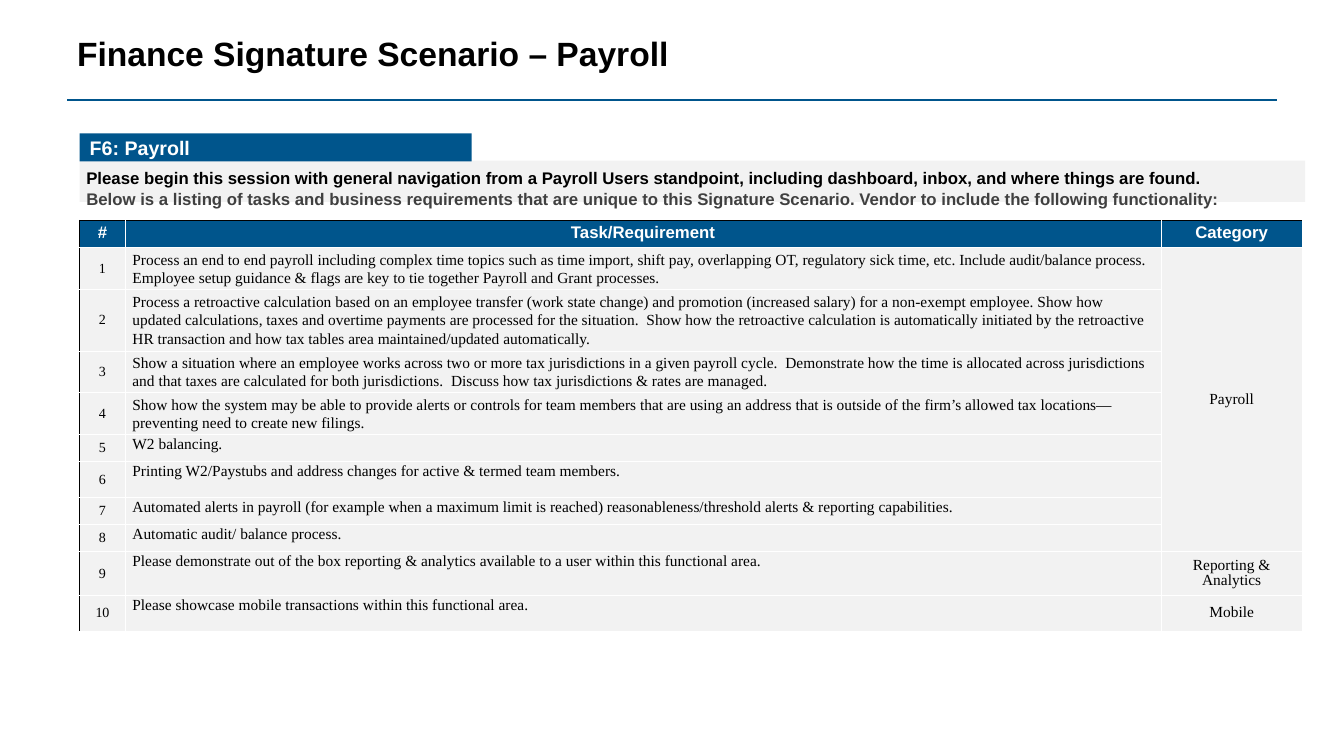
import dataclasses

import pptx
import pptx.dml.color
import pptx.enum.shapes
import pptx.enum.text
import pptx.oxml
import pptx.oxml.ns
import pptx.util
from lxml import etree

Pt = pptx.util.Pt
ALIGN = pptx.enum.text.PP_ALIGN
ANCHOR = pptx.enum.text.MSO_ANCHOR


@dataclasses.dataclass(frozen=True)
class Theme:
    blue: str = "00558C"
    pale: str = "F2F2F2"
    white: str = "FFFFFF"
    black: str = "000000"
    gray: str = "404040"
    sans: str = "Arial"
    serif: str = "Times New Roman"
    title: int = 24
    label: int = 14
    head: int = 12
    body: int = 11
    small: int = 10


THEME = Theme()

COLS = (32.4, 740.2, 100.8)
HEAD = ("#", "Task/Requirement", "Category")
HEAD_HIGH = 19.4

# Each task: row height, anchor, wording
TASKS = (
    (29.7, ANCHOR.MIDDLE, "Process an end to end payroll including complex time topics such as time import, shift pay, overlapping OT, regulatory sick time, etc. Include audit/balance process. Employee setup guidance & flags are key to tie together Payroll and Grant processes."),
    (44.3, ANCHOR.MIDDLE, "Process a retroactive calculation based on an employee transfer (work state change) and promotion (increased salary) for a non-exempt employee. Show how updated calculations, taxes and overtime payments are processed for the situation.  Show how the retroactive calculation is automatically initiated by the retroactive HR transaction and how tax tables area maintained/updated automatically."),
    (29.7, ANCHOR.MIDDLE, "Show a situation where an employee works across two or more tax jurisdictions in a given payroll cycle.  Demonstrate how the time is allocated across jurisdictions and that taxes are calculated for both jurisdictions.  Discuss how tax jurisdictions & rates are managed."),
    (29.7, ANCHOR.MIDDLE, "Show how the system may be able to provide alerts or controls for team members that are using an address that is outside of the firm’s allowed tax locations—preventing need to create new filings."),
    (19.4, ANCHOR.TOP, "W2 balancing."),
    (25.8, ANCHOR.TOP, "Printing W2/Paystubs and address changes for active & termed team members."),
    (19.4, ANCHOR.TOP, "Automated alerts in payroll (for example when a maximum limit is reached) reasonableness/threshold alerts & reporting capabilities."),
    (19.4, ANCHOR.TOP, "Automatic audit/ balance process."),
    (31, ANCHOR.TOP, "Please demonstrate out of the box reporting & analytics available to a user within this functional area."),
    (25.8, ANCHOR.TOP, "Please showcase mobile transactions within this functional area."),
)

# Each group: first row, last row, name
GROUPS = ((1, 8, "Payroll"), (9, 9, "Reporting & Analytics"), (10, 10, "Mobile"))


def tint(code):
    return pptx.dml.color.RGBColor.from_string(code)


def write(para, words, *, size, ink=THEME.black, font=THEME.sans,
          bold=False, align=ALIGN.LEFT, gap=None):
    para.alignment = align
    para.line_spacing = gap
    run = para.add_run()
    run.text = words
    run.font.size = Pt(size)
    run.font.name = font
    run.font.bold = bold
    run.font.color.rgb = tint(ink)


def add_text(slide, left, top, width, height):
    frame = slide.shapes.add_textbox(Pt(left), Pt(top), Pt(width), Pt(height)).text_frame
    frame.word_wrap = True
    return frame


def add_bar(slide, left, top, width, height, fill):
    kind = pptx.enum.shapes.MSO_SHAPE.RECTANGLE
    bar = slide.shapes.add_shape(kind, Pt(left), Pt(top), Pt(width), Pt(height))
    bar.shadow.inherit = False
    bar.fill.solid()
    bar.fill.fore_color.rgb = tint(fill)
    bar.line.fill.background()
    bar.text_frame.vertical_anchor = ANCHOR.MIDDLE
    return bar.text_frame


def add_rule(slide, left, right, top):
    kind = pptx.enum.shapes.MSO_CONNECTOR.STRAIGHT
    rule = slide.shapes.add_connector(kind, Pt(left), Pt(top), Pt(right), Pt(top))
    rule.line.color.rgb = tint(THEME.blue)
    rule.line.width = Pt(1.5)
    etree.SubElement(rule.element.spPr, pptx.oxml.ns.qn("a:effectLst"))


def style_cell(cell, row, col):
    # Borders come before the fill in the cell's XML
    props = cell._tc.get_or_add_tcPr()
    dark = {"L": col == 0, "R": False, "T": row == 0, "B": False}
    for side, is_dark in dark.items():
        ink = THEME.black if is_dark else THEME.white
        props.append(pptx.oxml.parse_xml(
            f'<a:ln{side} {pptx.oxml.ns.nsdecls("a")} w="12700"><a:solidFill>'
            f'<a:srgbClr val="{ink}"/></a:solidFill></a:ln{side}>'))
    cell.fill.solid()
    cell.fill.fore_color.rgb = tint(THEME.pale if row else THEME.blue)


def fill_cell(cell, words, *, side=3.6, edge=3.6, anchor=ANCHOR.MIDDLE, **form):
    cell.margin_left = cell.margin_right = Pt(side)
    cell.margin_top = cell.margin_bottom = Pt(edge)
    cell.vertical_anchor = anchor
    write(cell.text_frame.paragraphs[0], words, **form)


def add_grid(slide, left, top):
    highs = [HEAD_HIGH] + [task[0] for task in TASKS]
    grid = slide.shapes.add_table(len(highs), len(COLS), Pt(left), Pt(top),
                                  Pt(sum(COLS)), Pt(sum(highs))).table
    for col, width in zip(grid.columns, COLS):
        col.width = Pt(width)
    for row, high in enumerate(highs):
        grid.rows[row].height = Pt(high)
        for col in range(len(COLS)):
            style_cell(grid.cell(row, col), row, col)

    mid = {"align": ALIGN.CENTER, "gap": Pt(11)}
    for col, words in enumerate(HEAD):
        fill_cell(grid.cell(0, col), words, size=THEME.head,
                  ink=THEME.white, bold=True, **mid)
    for row, (_, anchor, words) in enumerate(TASKS, 1):
        fill_cell(grid.cell(row, 0), str(row), size=THEME.small, font=THEME.serif, **mid)
        fill_cell(grid.cell(row, 1), words, side=5.2, edge=0, anchor=anchor,
                  size=THEME.body, font=THEME.serif, gap=1.07)
    for first, last, words in GROUPS:
        cell = grid.cell(first, 2)
        if last > first:
            cell.merge(grid.cell(last, 2))
        fill_cell(cell, words, size=THEME.body, font=THEME.serif, **mid)


def main():
    deck = pptx.Presentation()
    deck.slide_width, deck.slide_height = Pt(960.2), Pt(540)
    slide = deck.slides.add_slide(deck.slide_layouts[6])

    # Title and rule
    add_rule(slide, 48, 912, 71.5)
    title = add_text(slide, 48, 23, 864.5, 47)
    write(title.paragraphs[0], "Finance Signature Scenario – Payroll",
          size=THEME.title, bold=True, gap=0.9)

    # Section label and intro
    add_bar(slide, 57, 114.8, 875.5, 29.5, THEME.pale)
    label = add_bar(slide, 57, 95.3, 280, 20, THEME.blue)
    write(label.paragraphs[0], "F6: Payroll", size=THEME.label,
          ink=THEME.white, bold=True)
    intro = add_text(slide, 54.6, 116.6, 875.5, 36)
    write(intro.paragraphs[0], "Please begin this session with general navigation from a Payroll Users standpoint, including dashboard, inbox, and where things are found.",
          size=THEME.head, bold=True)
    write(intro.add_paragraph(), "Below is a listing of tasks and business requirements that are unique to this Signature Scenario. Vendor to include the following functionality:",
          size=THEME.head, ink=THEME.gray, bold=True)

    # Task table
    add_grid(slide, 57, 157.5)

    deck.save("out.pptx")


if __name__ == "__main__":
    main()
